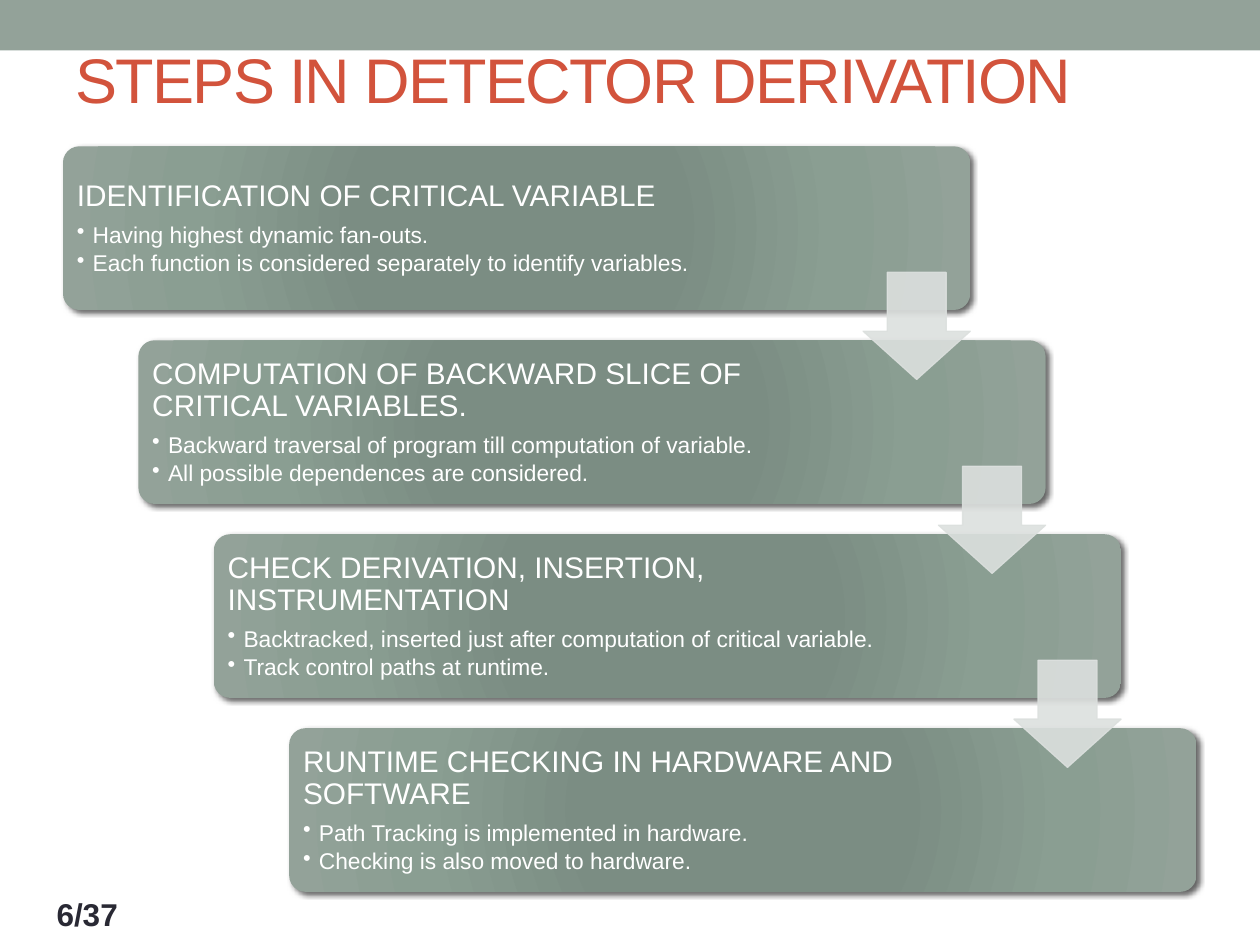
"""Build the slide that shows the four steps of detector derivation."""
import pptx
import pptx.dml.color
import pptx.enum.shapes
import pptx.enum.text
import pptx.oxml
import pptx.oxml.ns
import pptx.util

Cm = pptx.util.Cm
Pt = pptx.util.Pt
Shape = pptx.enum.shapes.MSO_SHAPE
Anchor = pptx.enum.text.MSO_ANCHOR
Align = pptx.enum.text.PP_ALIGN
AutoSize = pptx.enum.text.MSO_AUTO_SIZE

STEPS = [
    ("IDENTIFICATION OF CRITICAL VARIABLE",
     ["Having highest dynamic fan-outs.",
      "Each function is considered separately to identify variables."]),
    ("COMPUTATION OF BACKWARD SLICE OF CRITICAL VARIABLES.",
     ["Backward traversal of program till computation of variable.",
      "All possible dependences are considered."]),
    ("CHECK DERIVATION, INSERTION, INSTRUMENTATION",
     ["Backtracked, inserted just after computation of critical variable.",
      "Track control paths at runtime."]),
    ("RUNTIME CHECKING IN HARDWARE AND SOFTWARE",
     ["Path Tracking is implemented in hardware.",
      "Checking is also moved to hardware."]),
]
CARD_LEFT, CARD_TOP, CARD_WIDTH, CARD_HEIGHT = 1.27, 2.95, 18.29, 3.3
STEP_X, STEP_Y = 1.52, 3.91
ARROW_SIZE, ARROW_TOP = 2.16, 5.49
GRADIENT = [(0, "7B8E82"), (34, "7B8D83"), (70, "8A9E92"), (100, "93A299")]


def color(value):
    return pptx.dml.color.RGBColor.from_string(value)


def apply(target, values):
    for name, value in values.items():
        setattr(target, name, value)


def xml(tag, content):
    namespace = pptx.oxml.ns.nsdecls("a")
    return pptx.oxml.parse_xml(f"<a:{tag} {namespace}>{content}</a:{tag}>")


class SlideBuilder:
    """Hold the style and the current slide, and draw its elements."""

    font = "Arial"
    sage, pale, rust, ink, white = "93A299", "DCE0DE", "D2533C", "292934", "FFFFFF"

    def __init__(self, deck):
        self.slide = deck.slides.add_slide(deck.slide_layouts[5])

    def shape(self, kind, left, top, width, height, fill):
        shape = self.slide.shapes.add_shape(
            kind, Cm(left), Cm(top), Cm(width), Cm(height))
        shape.shadow.inherit = False
        shape.fill.solid()
        shape.fill.fore_color.rgb = color(fill)
        shape.line.fill.background()
        return shape

    def add_text(self, para, text, size, fill, bold=False):
        span = para.add_run()
        span.text = text
        apply(span.font, {"name": self.font, "size": Pt(size), "bold": bold})
        span.font.color.rgb = color(fill)
        return span

    def title(self, text):
        title = self.slide.shapes.title
        apply(title, {"left": Cm(1.27), "top": Cm(0.2),
                      "width": Cm(22.86), "height": Cm(2.74)})
        apply(title.text_frame, {"auto_size": AutoSize.NONE, "word_wrap": True,
                                 "vertical_anchor": Anchor.MIDDLE})
        para = title.text_frame.paragraphs[0]
        para.alignment = Align.LEFT
        span = self.add_text(para, text, 36, self.rust)
        span.font._element.set("spc", "-100")

    def band(self):
        band = self.shape(Shape.RECTANGLE, 0, 0, 25.4, 1.02, self.sage)
        self.slide.shapes.title.element.addprevious(band.element)

    def text_box(self, left, top, width, height, values):
        box = self.slide.shapes.add_textbox(
            Cm(left), Cm(top), Cm(width), Cm(height))
        apply(box.text_frame, {"word_wrap": True, **values})
        return box.text_frame

    def card(self, left, top):
        card = self.shape(Shape.ROUNDED_RECTANGLE, left, top,
                          CARD_WIDTH, CARD_HEIGHT, self.sage)
        card.adjustments[0] = 0.1
        stops = "".join(
            f'<a:gs pos="{place * 1000}"><a:srgbClr val="{value}"/></a:gs>'
            for place, value in GRADIENT)
        properties = card.element.spPr
        properties.replace(
            properties.find(pptx.oxml.ns.qn("a:solidFill")),
            xml("gradFill", f'<a:gsLst>{stops}</a:gsLst><a:path path="circle">'
                '<a:fillToRect l="100000" t="100000" r="100000" b="100000"/>'
                '</a:path>'))
        properties.replace(
            properties.find(pptx.oxml.ns.qn("a:effectLst")),
            xml("effectLst", f'<a:outerShdw blurRad="{Pt(3)}" dist="{Pt(2)}" '
                'dir="2700000" algn="tl" rotWithShape="0"><a:srgbClr val="000000">'
                '<a:alpha val="60000"/></a:srgbClr></a:outerShdw>'))

    def step_text(self, left, top, heading, points):
        margins = {f"margin_{side}": Cm(0.18)
                   for side in ("left", "top", "right", "bottom")}
        frame = self.text_box(left + 0.1, top + 0.1, 14.42, 3.12,
                              {"vertical_anchor": Anchor.MIDDLE, **margins})
        para = frame.paragraphs[0]
        apply(para, {"line_spacing": 0.9, "space_after": Pt(6)})
        self.add_text(para, heading, 17, self.white)
        for point in points:
            para = frame.add_paragraph()
            apply(para, {"level": 1, "line_spacing": 0.9, "space_after": Pt(2.3)})
            properties = para._p.get_or_add_pPr()
            properties.set("marL", str(Cm(0.32)))
            properties.set("indent", str(-Cm(0.32)))
            bullet = xml("buChar", "")
            bullet.set("char", "•")
            properties.append(bullet)
            self.add_text(para, point, 13, self.white)

    def arrow(self, left, top):
        arrow = self.shape(Shape.DOWN_ARROW, left, top,
                           ARROW_SIZE, ARROW_SIZE, self.pale)
        arrow.adjustments[0] = 0.55
        arrow.adjustments[1] = 0.45
        arrow.line.color.rgb = color(self.pale)
        arrow.line.width = Pt(0.75)
        for tint in arrow.element.spPr.iter(pptx.oxml.ns.qn("a:srgbClr")):
            alpha = xml("alpha", "")
            alpha.set("val", "90000")
            tint.append(alpha)

    def page_number(self, text):
        frame = self.text_box(0.89, 17.91, 3.3, 1.02, {})
        self.add_text(frame.paragraphs[0], text, 18, self.ink, bold=True)


def main():
    deck = pptx.Presentation()
    apply(deck, {"slide_width": Cm(25.4), "slide_height": Cm(19.05)})
    builder = SlideBuilder(deck)
    builder.band()
    builder.title("STEPS IN DETECTOR DERIVATION")
    for index, (heading, points) in enumerate(STEPS):
        left, top = CARD_LEFT + index * STEP_X, CARD_TOP + index * STEP_Y
        builder.card(left, top)
        builder.step_text(left, top, heading, points)
    for index in range(len(STEPS) - 1):
        builder.arrow(CARD_LEFT + CARD_WIDTH - ARROW_SIZE + index * STEP_X,
                      ARROW_TOP + index * STEP_Y)
    builder.page_number("6/37")
    deck.save("out.pptx")


if __name__ == "__main__":
    main()
